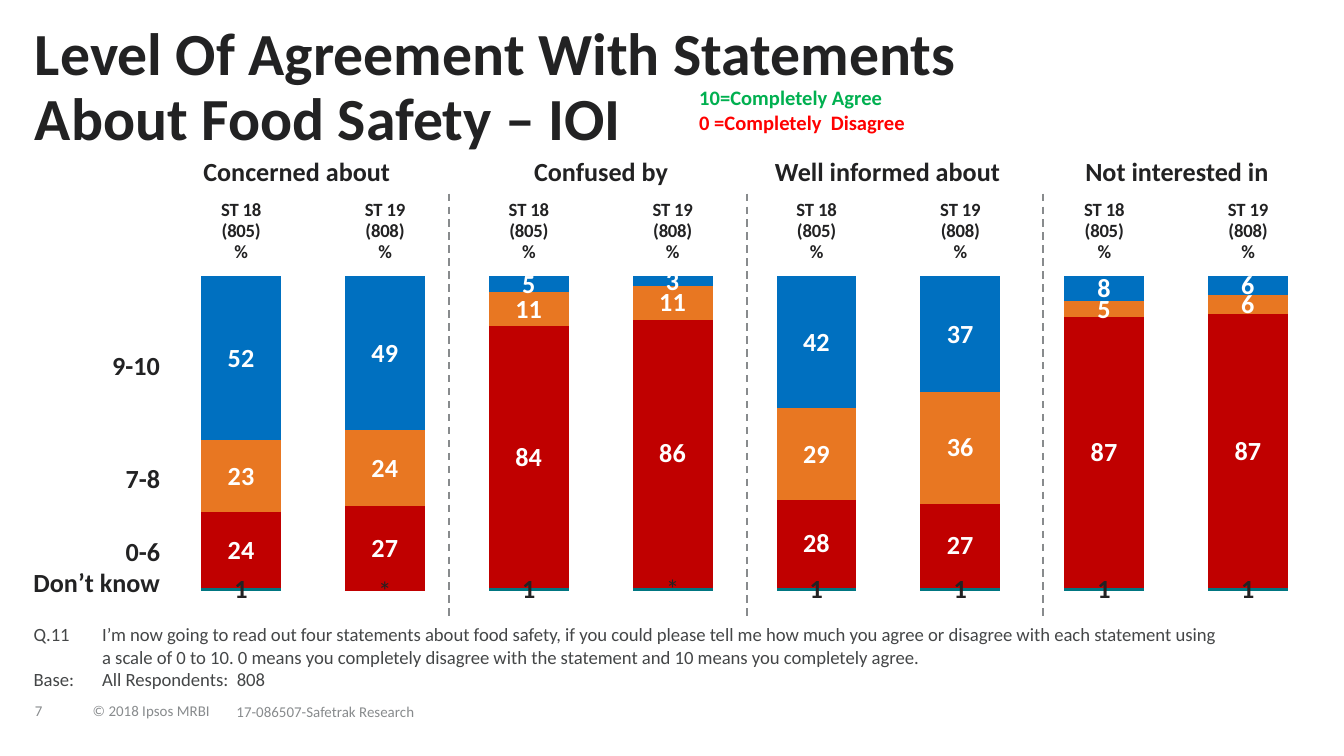
from lxml.etree import SubElement
from pptx import Presentation
from pptx.chart.data import CategoryChartData
from pptx.dml.color import RGBColor
from pptx.enum.chart import (XL_CHART_TYPE, XL_LABEL_POSITION, XL_TICK_LABEL_POSITION,
                             XL_TICK_MARK)
from pptx.enum.dml import MSO_LINE
from pptx.enum.shapes import MSO_CONNECTOR
from pptx.enum.text import MSO_ANCHOR, MSO_AUTO_SIZE, PP_ALIGN
from pptx.oxml.ns import qn
from pptx.util import Pt


def rgb(value):
    return RGBColor.from_string(value)


class SurveySlide:
    FONT = "Calibri"
    INK, BODY, GREY, WHITE = "222223", "444647", "888B8D", "FFFFFF"

    def __init__(self, slide):
        self.slide = slide

    def style(self, font, size, color=INK, bold=True):
        font.name, font.size, font.bold = self.FONT, Pt(size), bold
        font.color.rgb = rgb(color)

    def place(self, shape, left, top, width, height):
        shape.left, shape.top = Pt(left), Pt(top)
        shape.width, shape.height = Pt(width), Pt(height)

    def frame(self, shape, anchor, inset=0, wrap=True):
        frame = shape.text_frame
        frame.word_wrap, frame.auto_size = wrap, MSO_AUTO_SIZE.NONE
        frame.vertical_anchor = anchor
        frame.margin_left = frame.margin_right = Pt(inset * 2)
        frame.margin_top = frame.margin_bottom = Pt(inset)
        return frame

    def title(self, text, box):
        title = self.slide.shapes.title
        self.place(title, *box)
        paragraph = self.frame(title, MSO_ANCHOR.TOP).paragraphs[0]
        paragraph.text = text
        paragraph.alignment, paragraph.line_spacing = PP_ALIGN.LEFT, 0.9
        self.style(paragraph.font, 32)

    def question(self, lines, box, indent):
        body = self.slide.placeholders[1]
        self.place(body, *box)
        frame = self.frame(body, MSO_ANCHOR.BOTTOM)
        frame.text = "\n".join(lines)
        for paragraph in frame.paragraphs:
            paragraph.space_before, paragraph.line_spacing = Pt(0), 1.0
            # Hanging indent with a tab stop and no bullet
            props = paragraph._p.get_or_add_pPr()
            props.set("marL", str(Pt(indent)))
            props.set("indent", str(-Pt(indent)))
            SubElement(props, qn("a:buNone"))
            tabs = SubElement(props, qn("a:tabLst"))
            SubElement(tabs, qn("a:tab"), pos=str(Pt(indent)), algn="l")
            self.style(paragraph.font, 10, self.BODY, False)

    def text(self, lines, box, size, color=INK, bold=True, align=PP_ALIGN.LEFT,
             anchor=MSO_ANCHOR.TOP, inset=0, wrap=True, spacing=1.0, gaps=(0,)):
        textbox = self.slide.shapes.add_textbox(*map(Pt, box))
        frame = self.frame(textbox, anchor, inset, wrap)
        frame.text = "\n".join(lines)
        for paragraph, gap in zip(frame.paragraphs, gaps):
            paragraph.alignment, paragraph.line_spacing = align, spacing
            paragraph.space_before = Pt(gap)
            self.style(paragraph.font, size, color, bold)

    def divider(self, x, top, bottom):
        line = self.slide.shapes.add_connector(
            MSO_CONNECTOR.STRAIGHT, Pt(x), Pt(top), Pt(x), Pt(bottom))
        line.line.color.rgb, line.line.width = rgb(self.GREY), Pt(1)
        line.line.dash_style = MSO_LINE.DASH
        SubElement(line._element.spPr, qn("a:effectLst"))

    def stacked_chart(self, categories, bands, box, plot, starred):
        data = CategoryChartData()
        data.categories = categories
        for name, values, _, _ in bands:
            data.add_series(name, values)
        chart = self.slide.shapes.add_chart(
            XL_CHART_TYPE.COLUMN_STACKED_100, *map(Pt, box), data).chart
        chart.has_legend = chart.has_title = False
        self.style(chart.font, 14)

        # Category labels above the columns, value axis hidden
        axis = chart.category_axis
        axis.tick_label_position = XL_TICK_LABEL_POSITION.HIGH
        axis.major_tick_mark = axis.minor_tick_mark = XL_TICK_MARK.NONE
        axis.format.line.color.rgb, axis.format.line.width = rgb(self.WHITE), Pt(0.75)
        self.style(axis.tick_labels.font, 10)
        chart.value_axis.visible = False
        chart.value_axis.has_major_gridlines = False

        # Inner plot area as fractions of the chart
        area = chart._chartSpace.chart.plotArea
        layout = area.find(qn("c:layout"))
        if layout is None:
            layout = SubElement(area, qn("c:layout"))
            area.insert(0, layout)
        manual = SubElement(layout, qn("c:manualLayout"))
        settings = {"layoutTarget": "inner", "xMode": "edge", "yMode": "edge", **plot}
        for key, value in settings.items():
            SubElement(manual, qn("c:" + key), val=str(value))

        columns = chart.plots[0]
        columns.gap_width, columns.overlap = 80, 100
        columns.vary_by_categories = False
        for series, (_, _, fill, label_color) in zip(columns.series, bands):
            series.format.fill.solid()
            series.format.fill.fore_color.rgb = rgb(fill)
            labels = series.data_labels
            labels.show_value, labels.position = True, XL_LABEL_POSITION.CENTER
            self.style(labels.font, 14, label_color)

        # Columns whose lowest band carries a star
        for index in starred:
            label = columns.series[0].points[index].data_label
            paragraph = label.text_frame.paragraphs[0]
            paragraph.text = "*"
            self.style(paragraph.font, 14)
            label.position = XL_LABEL_POSITION.CENTER


def main():
    prs = Presentation()
    prs.slide_width, prs.slide_height = Pt(720), Pt(405)
    page = SurveySlide(prs.slides.add_slide(prs.slide_layouts[1]))

    # Footer
    for text, box in (("7", (18.7, 372, 24.5, 19)),
                      ("© 2018 Ipsos MRBI", (49.7, 375, 55, 13)),
                      ("17-086507-Safetrak Research", (126.7, 371, 196, 22))):
        page.text([text], box, 8, page.GREY, False, anchor=MSO_ANCHOR.MIDDLE,
                  wrap=False, spacing=0.85)

    # Title and question
    page.title("Level Of Agreement With Statements About Food Safety – IOI",
               (18.7, 13, 569.5, 70))
    page.question(
        ["Q.11\tI’m now going to read out four statements about food safety, if you could "
         "please tell me how much you agree or disagree with each statement using a scale "
         "of 0 to 10. 0 means you completely disagree with the statement and 10 means you "
         "completely agree.",
         "Base:\tAll Respondents:  808"],
        (18, 321.8, 634.3, 48.2), 36.7)

    # Agreement chart
    bands = [("Don’t know", (1, 0, 1, 1, 1, 1, 1, 1), "007681", page.INK),
             ("0-6", (24, 27, 84, 86, 28, 27, 87, 87), "C00000", page.WHITE),
             ("7-8", (23, 24, 11, 11, 29, 36, 5, 6), "E87722", page.WHITE),
             ("9-10", (52, 49, 5, 3, 42, 37, 8, 6), "0070C0", page.WHITE)]
    page.stacked_chart(["ST 18\n(805)\n%", "ST 19\n(808)\n%"] * 4, bands,
                       (77.8, 103.7, 642.2, 221.8),
                       {"x": 0.02, "y": 0.2, "w": 0.96, "h": 0.76}, starred=(1, 3))

    # Score bands beside the columns
    page.text([name for name, *_ in reversed(bands)], (6.5, 183.6, 86.4, 140.4), 14,
              align=PP_ALIGN.RIGHT, inset=3.6, gaps=(0, 44, 22, 0))

    # Statement headings
    for statement, left, width in (("Concerned about", 99, 120),
                                   ("Confused by", 262, 120),
                                   ("Well informed about", 407.5, 136),
                                   ("Not interested in", 570.5, 120)):
        page.text([statement], (left, 83.5, width, 17.3), 14, align=PP_ALIGN.CENTER)

    # Scale key
    page.text(["10=Completely Agree"], (374.6, 45.4, 128, 13.7), 11, "00B050")
    page.text(["0 =Completely  Disagree"], (374.6, 59, 128, 13.7), 11, "FF0000")

    # Dividers between statements
    for x in (240.5, 400.3, 558.7):
        page.divider(x, 103.7, 329.8)

    prs.save("out.pptx")


if __name__ == "__main__":
    main()
